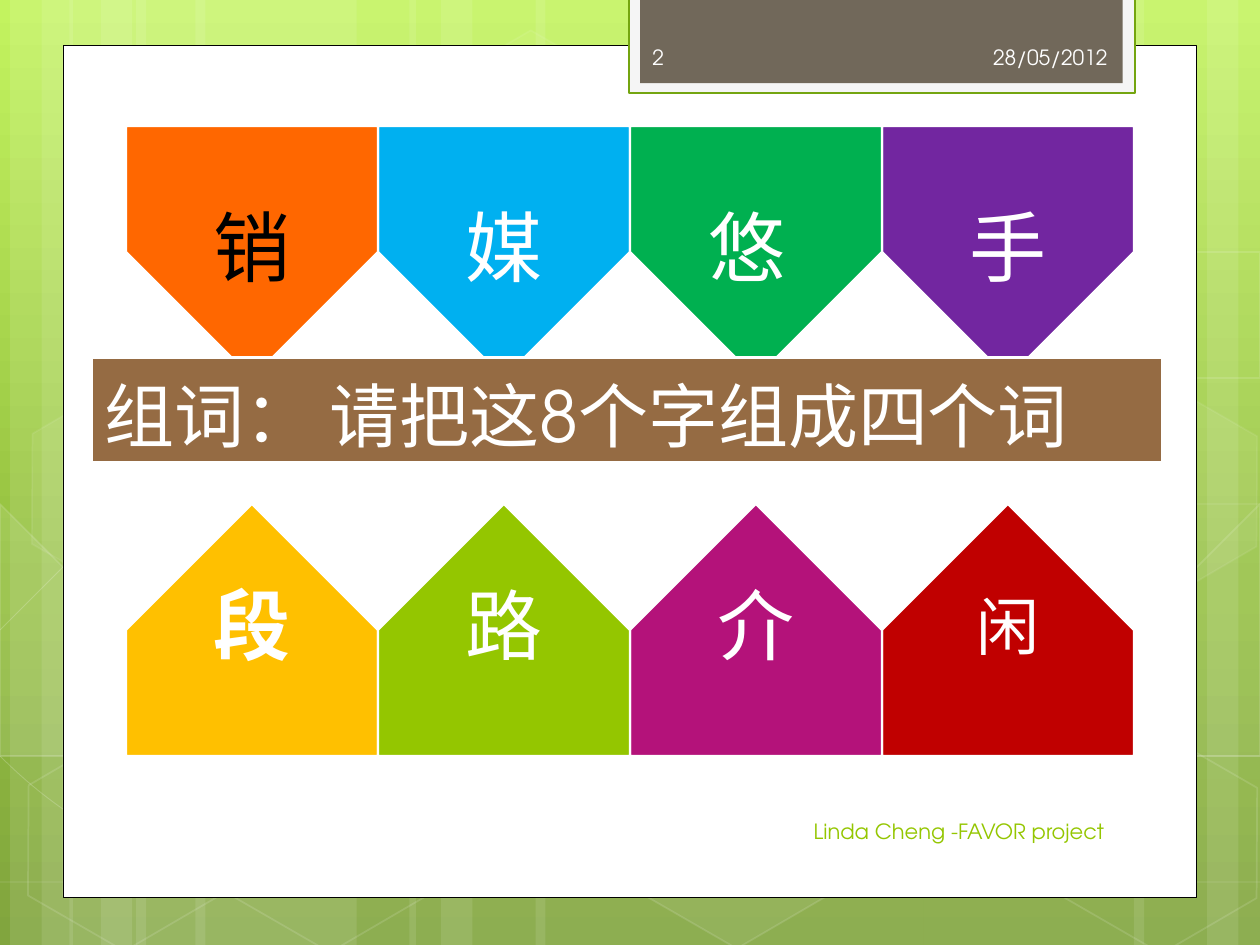
from copy import deepcopy

from lxml.etree import SubElement
from pptx import Presentation
from pptx.dml.color import RGBColor
from pptx.enum.shapes import MSO_SHAPE
from pptx.enum.text import MSO_ANCHOR, PP_ALIGN
from pptx.oxml.ns import qn
from pptx.util import Inches, Pt

WIDTH, HEIGHT = 10, 7.5
FONT = "TeX Gyre Adventor"
COLORS = {
    "white": "FFFFFF", "black": "000000", "label": "FEFEFE",
    "orange": "FF6700", "blue": "00B0F0", "green": "00B050", "purple": "7226A0",
    "yellow": "FFC000", "lime": "94C600", "magenta": "B4127A", "red": "C00000",
    "brown": "956B43", "tab": "71685A", "tab_frame": "F5F5F5", "tab_line": "74A510",
}
BACKGROUND = [(0, "C3F35F"), (0.62, "93BF3F"), (1, "81A53E")]

# Left edge and width of each pale full-height stripe
STRIPES = [(1.08, 1.75), (0.08, 0.5), (0.33, 0.83), (1.55, 1.75), (0.55, 0.5),
           (0.8, 0.83), (7.33, 1.75), (9.58, 0.5), (9, 0.83), (4.25, 3.08),
           (3.25, 0.5), (3.5, 0.83)]

# Start point, then three points for each curve segment
CURVES = [
    [(0.07, 6.73), (0.61, 6.76), (1.15, 6.79), (1.9, 6.78),
     (2.65, 6.77), (3.58, 6.75), (4.58, 6.65), (5.58, 6.55), (7, 6.36), (7.92, 6.17),
     (8.83, 5.98), (9.77, 5.68), (10.07, 5.51)],
    [(0.07, 4.77), (0.36, 4.61), (0.65, 4.46), (1.21, 4.31),
     (1.78, 4.16), (2.59, 3.94), (3.47, 3.87), (4.36, 3.8), (5.44, 3.79), (6.54, 3.87),
     (7.64, 3.95), (9.47, 4.26), (10.07, 4.34)],
    [(0.06, 6.17), (1.27, 6.72), (2.47, 7.27), (3.34, 7.49)],
    [(0.07, 5.78), (0.38, 5.89), (0.7, 6), (1.28, 6.16),
     (1.86, 6.31), (2.73, 6.56), (3.57, 6.73), (4.4, 6.9), (5.45, 7.08), (6.28, 7.18),
     (7.11, 7.29), (8, 7.33), (8.53, 7.36), (9.05, 7.4), (9.19, 7.38), (9.45, 7.38),
     (9.71, 7.37), (9.89, 7.35), (10.07, 7.34)],
    [(2.42, 7.49), (2.6, 7.29), (2.78, 7.09), (3.02, 6.91),
     (3.26, 6.73), (3.6, 6.53), (3.88, 6.39), (4.16, 6.25), (4.33, 6.19), (4.7, 6.09),
     (5.06, 5.99), (5.73, 5.85), (6.08, 5.78), (6.44, 5.71), (6.49, 5.71), (6.8, 5.69),
     (7.11, 5.66), (7.6, 5.63), (7.94, 5.62), (8.29, 5.61), (8.86, 5.62), (8.86, 5.62),
     (8.86, 5.62), (9.53, 5.62), (9.53, 5.62), (9.71, 5.63), (9.88, 5.64), (10.06, 5.66)],
]

# Left, top, fill opacity (0 for none) and line opacity, in percent
PALE_HEXAGONS = [(3.34, 0.36, 4, 8), (4.97, 5.89, 6, 12), (0.11, 5.91, 0, 12),
                 (0.14, 3.12, 7, 8), (1.74, 5.92, 0, 12), (7.53, 4.53, 10, 12),
                 (8.34, 5.93, 0, 12), (8.34, 3.14, 7, 8)]

# Hexagons cut off at the slide's edge: outline and fill opacity
CUT_HEXAGONS = [
    ([(0.08, 4.45), (0.19, 4.38), (0.96, 4.82), (0.95, 5.7), (0.2, 6.14), (0.08, 6.07)], 10),
    ([(9.26, 4.85), (10.01, 4.41), (10.09, 4.46), (10.09, 6.13), (10.02, 6.17), (9.26, 5.73)], 4),
    ([(9.26, 2.07), (10.01, 1.63), (10.1, 1.68), (10.09, 3.35), (10.02, 3.39), (9.26, 2.95)], 0),
]

SMALL, LARGE = (1.78, 2.02), (1.85, 2.13)
# Character, left, top, size, fill, text format
WORD_TILES = [
    ("媒", 2.79, 0.72, SMALL, "blue", {}),
    ("段", 0.73, 4.16, SMALL, "yellow", {"bold": True}),
    ("销", 0.73, 0.7, LARGE, "orange", {"color": "black"}),
    ("闲", 7.16, 4.18, LARGE, "red", {"size": 36}),
    ("介", 4.97, 4.22, SMALL, "magenta", {}),
    ("路", 2.79, 4.16, SMALL, "lime", {}),
    ("手", 7.01, 0.7, SMALL, "purple", {}),
    ("悠 ", 4.9, 0.71, SMALL, "green", {}),
]

# Text, box, alignment, colour
LABELS = [
    ("28/05/2012", (6.56, 0.25, 2.33, 0.4), PP_ALIGN.RIGHT, "label"),
    ("Linda Cheng -FAVOR project ", (5.08, 6.4, 3.83, 0.4), PP_ALIGN.RIGHT, "lime"),
    ("2", (5.08, 0.25, 1.46, 0.4), PP_ALIGN.LEFT, "label"),
]


def set_solid(fill, color, opacity):
    fill.solid()
    fill.fore_color.rgb = RGBColor.from_string(COLORS[color])
    if opacity < 100:
        color_element = fill._xPr.find(".//" + qn("a:srgbClr"))
        SubElement(color_element, qn("a:alpha"), val=str(opacity * 1000))


def style(shape, fill=None, opacity=100, line=None, width=1, line_opacity=100):
    shape.shadow.inherit = False
    if fill and opacity:
        set_solid(shape.fill, fill, opacity)
    else:
        shape.fill.background()
    if line:
        shape.line.width = Pt(width)
        set_solid(shape.line.fill, line, line_opacity)
    else:
        shape.line.fill.background()
    return shape


def add_box(slide, box, kind=MSO_SHAPE.RECTANGLE, **look):
    return style(slide.shapes.add_shape(kind, *map(Inches, box)), **look)


def add_outline(slide, points, close=True, **look):
    builder = slide.shapes.build_freeform(*points[0], scale=Inches(1))
    builder.add_line_segments(points[1:], close=close)
    return style(builder.convert_to_shape(), **look)


def add_curve(slide, points, **look):
    """Draw the points as lines, then make each three of them one Bezier segment."""
    shape = add_outline(slide, points, close=False, **look)
    outline = shape._element.find(".//" + qn("a:path"))
    steps = iter(outline.findall(qn("a:lnTo")))
    for segment in zip(steps, steps, steps):
        curve = SubElement(outline, qn("a:cubicBezTo"))
        for step in segment:
            curve.append(step[0])
            outline.remove(step)


def write(shape, text, size=12, color="white", bold=False, align=PP_ALIGN.LEFT,
          anchor=MSO_ANCHOR.MIDDLE, spacing=1.0):
    frame = shape.text_frame
    frame.word_wrap = True
    frame.vertical_anchor = anchor
    paragraph = frame.paragraphs[0]
    paragraph.alignment = align
    paragraph.line_spacing = spacing
    run = paragraph.add_run()
    run.text = text
    run.font.name, run.font.size, run.font.bold = FONT, Pt(size), bold
    run.font.color.rgb = RGBColor.from_string(COLORS[color])


def paint_background(slide):
    fill = slide.background.fill
    fill.gradient()
    fill.gradient_angle = 270
    stop_list = slide._element.find(".//" + qn("a:gsLst"))
    stop_list.append(deepcopy(stop_list[0]))
    for stop, (position, color) in zip(fill.gradient_stops, BACKGROUND):
        stop.position = position
        stop.color.rgb = RGBColor.from_string(color)


def add_decoration(slide):
    for left, width in STRIPES:
        add_box(slide, (left, 0, width, HEIGHT), fill="white", opacity=10)
    for points in CURVES:
        add_curve(slide, points, line="white", width=0.5, line_opacity=20)
    for left, top, opacity, line_opacity in PALE_HEXAGONS:
        hexagon = add_box(slide, (left, top, 1.75, 1.52), MSO_SHAPE.HEXAGON, fill="white",
                          opacity=opacity, line="white", line_opacity=line_opacity)
        hexagon.adjustments[0] = 0.285
        hexagon.rotation = 30
    for points, opacity in CUT_HEXAGONS:
        add_outline(slide, points, fill="white", opacity=opacity, line="white", line_opacity=12)
    add_box(slide, (0.5, 0.36, 9, 6.76), fill="white", line="black", width=0.5)
    add_box(slide, (4.99, -0.02, 4.02, 0.76), fill="tab_frame", line="tab_line", width=1.25)
    add_box(slide, (5.08, -0.02, 3.83, 0.68), fill="tab")


def add_word_tile(slide, text, left, top, size, fill, text_format):
    width, height = size
    middle, right, bottom = left + width / 2, left + width, top + height
    shoulder = width / 4
    points = [(middle, top), (right, top + shoulder), (right, bottom - shoulder),
              (middle, bottom), (left, bottom - shoulder), (left, top + shoulder)]
    tile = add_outline(slide, points, fill=fill, line="white", width=1.25)
    frame = tile.text_frame
    frame.margin_left = frame.margin_right = Inches(0.32)
    frame.margin_top = frame.margin_bottom = Inches(0.35)
    write(tile, text, **{"size": 44, "align": PP_ALIGN.CENTER, "spacing": 0.9, **text_format})


def main():
    presentation = Presentation()
    presentation.slide_width, presentation.slide_height = Inches(WIDTH), Inches(HEIGHT)
    slide = presentation.slides.add_slide(presentation.slide_layouts[6])
    paint_background(slide)
    add_decoration(slide)
    for tile in WORD_TILES:
        add_word_tile(slide, *tile)
    banner = add_box(slide, (0.73, 2.84, 8.5, 0.83), fill="brown", line="white", width=1.75)
    write(banner, "组词： 请把这8个字组成四个词", size=40, anchor=MSO_ANCHOR.BOTTOM)
    for text, box, align, color in LABELS:
        write(slide.shapes.add_textbox(*map(Inches, box)), text, align=align, color=color)
    presentation.save("out.pptx")


if __name__ == "__main__":
    main()
